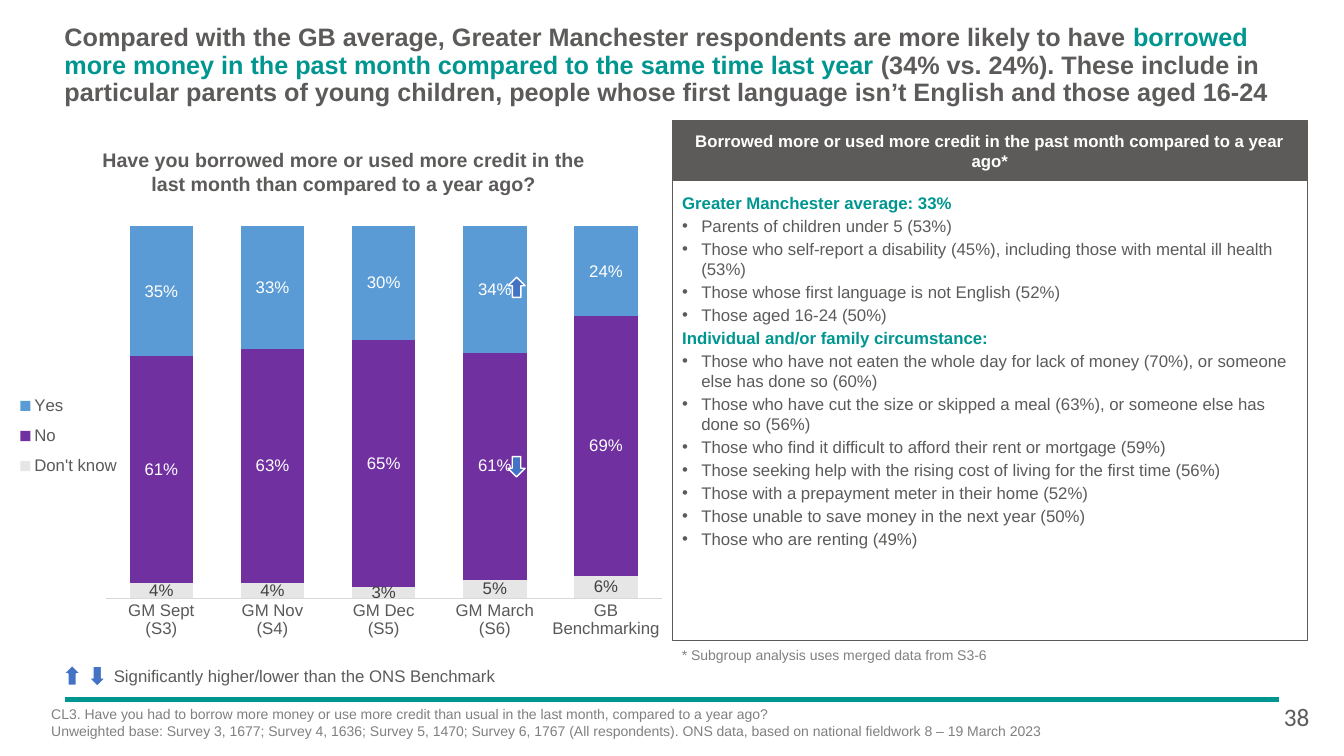
from dataclasses import dataclass

from lxml import etree
from pptx import Presentation
from pptx.chart.data import CategoryChartData
from pptx.dml.color import RGBColor
from pptx.enum.chart import XL_CHART_TYPE, XL_LABEL_POSITION, XL_LEGEND_POSITION, XL_TICK_MARK
from pptx.enum.shapes import MSO_CONNECTOR, MSO_SHAPE
from pptx.enum.text import MSO_ANCHOR, PP_ALIGN
from pptx.oxml.ns import qn
from pptx.util import Pt

LEFT, CENTER = PP_ALIGN.LEFT, PP_ALIGN.CENTER
TOP, MIDDLE = MSO_ANCHOR.TOP, MSO_ANCHOR.MIDDLE
RECTANGLE, DOWN_ARROW = MSO_SHAPE.RECTANGLE, MSO_SHAPE.DOWN_ARROW
STACKED = XL_CHART_TYPE.COLUMN_STACKED_100

GREY, TEAL, WHITE, NOTE_GREY = "5C5B5A", "009690", "FFFFFF", "808080"
ARROW_BLUE, AXIS_TEXT, AXIS_LINE = "4472C4", "595959", "D9D9D9"
DEFAULT_INSETS = (7.2, 3.6, 7.2, 3.6)


@dataclass
class Run:
    text: str
    color: str = GREY
    bold: bool = False


@dataclass
class Answer:
    name: str
    values: tuple[float, ...]
    fill: str
    label_color: str


@dataclass
class Arrow:
    left: float
    top: float
    up: bool


@dataclass
class Group:
    heading: str
    bullets: tuple[str, ...]


TITLE = [
    Run("Compared with the GB average, Greater Manchester respondents are more likely to have ", GREY, True),
    Run("borrowed more money in the past month compared to the same time last year ", TEAL, True),
    Run("(34% vs. 24%). These include in particular parents of young children, people whose first "
        "language isn’t English and those aged 16-24", GREY, True),
]
WAVES = ["GM Sept\n(S3)", "GM Nov\n(S4)", "GM Dec\n(S5)", "GM March\n(S6)", "GB\nBenchmarking"]
ANSWERS = [
    Answer("Don't know", (0.04, 0.04, 0.03, 0.05, 0.06), "E7E6E6", "404040"),
    Answer("No", (0.61, 0.63, 0.65, 0.61, 0.69), "7030A0", WHITE),
    Answer("Yes", (0.35, 0.33, 0.30, 0.34, 0.24), "5B9BD5", WHITE),
]
ARROWS = [
    Arrow(63.4, 475.9, False), Arrow(45.4, 475.2, True),
    Arrow(362.9, 198, True), Arrow(362.9, 326.2, False),
]
GROUPS = [
    Group("Greater Manchester average: 33%", (
        "Parents of children under 5 (53%)",
        "Those who self-report a disability (45%), including those with mental ill health (53%)",
        "Those whose first language is not English (52%)",
        "Those aged 16-24 (50%)",
    )),
    Group("Individual and/or family circumstance:", (
        "Those who have not eaten the whole day for lack of money (70%), or someone else has done so (60%)",
        "Those who have cut the size or skipped a meal (63%), or someone else has done so (56%)",
        "Those who find it difficult to afford their rent or mortgage (59%)",
        "Those seeking help with the rising cost of living for the first time (56%)",
        "Those with a prepayment meter in their home (52%)",
        "Those unable to save money in the next year (50%)",
        "Those who are renting (49%)",
    )),
]
SOURCES = [
    "CL3. Have you had to borrow more money or use more credit than usual in the last month, "
    "compared to a year ago?",
    "Unweighted base: Survey 3, 1677; Survey 4, 1636; Survey 5, 1470; Survey 6, 1767 (All respondents). "
    "ONS data, based on national fieldwork 8 – 19 March 2023",
]


def rgb(color: str) -> RGBColor:
    return RGBColor.from_string(color)


def style_font(font, size: float, color: str, bold: bool = False, name: str = "Arial") -> None:
    font.size, font.bold, font.name = Pt(size), bold, name
    font.color.rgb = rgb(color)


def write_text(shape, paragraphs: list[list[Run]], *, size: float = 12, font: str = "Arial",
               align=LEFT, anchor=TOP, insets=DEFAULT_INSETS, wrap: bool = True,
               line_spacing: float = 1.0, space_after: float = 0) -> None:
    frame = shape.text_frame
    frame.word_wrap, frame.vertical_anchor = wrap, anchor
    frame.margin_left, frame.margin_top, frame.margin_right, frame.margin_bottom = map(Pt, insets)
    for index, runs in enumerate(paragraphs):
        paragraph = frame.add_paragraph() if index else frame.paragraphs[0]
        paragraph.alignment, paragraph.line_spacing = align, line_spacing
        paragraph.space_after = Pt(space_after)
        for item in runs:
            run = paragraph.add_run()
            run.text = item.text
            style_font(run.font, size, item.color, item.bold, font)


def add_text(slide, left: float, top: float, width: float, height: float,
             paragraphs: list[list[Run]], **text_format) -> None:
    box = slide.shapes.add_textbox(Pt(left), Pt(top), Pt(width), Pt(height))
    write_text(box, paragraphs, **text_format)


def add_shape(slide, kind, left: float, top: float, width: float, height: float,
              fill: str | None, line: str, line_width: float):
    shape = slide.shapes.add_shape(kind, Pt(left), Pt(top), Pt(width), Pt(height))
    shape.shadow.inherit = False
    if fill:
        shape.fill.solid()
        shape.fill.fore_color.rgb = rgb(fill)
    else:
        shape.fill.background()
    shape.line.color.rgb, shape.line.width = rgb(line), Pt(line_width)
    return shape


def add_bullet(paragraph, indent: float) -> None:
    properties = paragraph._p.get_or_add_pPr()
    properties.set("marL", str(Pt(indent)))
    properties.set("indent", str(-Pt(indent)))
    etree.SubElement(properties, qn("a:buFont"), typeface="Arial")
    etree.SubElement(properties, qn("a:buChar"), char="•")


def set_layout(parent, index: int, **settings) -> None:
    for previous in parent.findall(qn("c:layout")):
        parent.remove(previous)
    layout = etree.Element(qn("c:layout"))
    manual = etree.SubElement(layout, qn("c:manualLayout"))
    for tag, value in settings.items():
        etree.SubElement(manual, qn(f"c:{tag}"), val=str(value))
    parent.insert(index, layout)


def add_answer_chart(slide) -> None:
    data = CategoryChartData(number_format="0%")
    data.categories = WAVES
    for answer in ANSWERS:
        data.add_series(answer.name, answer.values)
    chart = slide.shapes.add_chart(STACKED, Pt(-0.7), Pt(152.6), Pt(473.8), Pt(349.2), data).chart
    style_font(chart.font, 10, "000000")
    chart.has_title = False

    chart.has_legend = True
    chart.legend.position = XL_LEGEND_POSITION.LEFT
    chart.legend.include_in_layout = False
    style_font(chart.legend.font, 12, AXIS_TEXT)
    set_layout(chart.legend._element, 1, xMode="edge", yMode="edge", x=0.02, y=0.35, w=0.17, h=0.21)
    set_layout(chart._chartSpace.chart.plotArea, 0, layoutTarget="inner", xMode="edge", yMode="edge",
               x=0.161, y=0.026, w=0.838, h=0.761)

    chart.value_axis.visible = False
    chart.value_axis.has_major_gridlines = False
    axis = chart.category_axis
    axis.major_tick_mark = XL_TICK_MARK.NONE
    axis.format.line.color.rgb, axis.format.line.width = rgb(AXIS_LINE), Pt(0.75)
    style_font(axis.tick_labels.font, 12, AXIS_TEXT)

    plot = chart.plots[0]
    plot.gap_width, plot.overlap, plot.vary_by_categories = 75, 100, False
    for series, answer in zip(plot.series, ANSWERS):
        series.format.fill.solid()
        series.format.fill.fore_color.rgb = rgb(answer.fill)
        labels = series.data_labels
        labels.show_value, labels.position = True, XL_LABEL_POSITION.CENTER
        labels.number_format, labels.number_format_is_linked = "0%", False
        style_font(labels.font, 12, answer.label_color)


def add_subgroup_panel(slide) -> None:
    header = add_shape(slide, RECTANGLE, 480.2, 86.4, 453.6, 42.5, GREY, GREY, 0.75)
    heading = "Borrowed more or used more credit in the past month compared to a year ago*"
    write_text(header, [[Run(heading, WHITE, True)]], align=CENTER, anchor=MIDDLE)
    body = add_shape(slide, RECTANGLE, 480.2, 128.9, 453.6, 329, None, GREY, 0.75)
    lines = [run for group in GROUPS
             for run in (Run(group.heading, TEAL, True), *map(Run, group.bullets))]
    write_text(body, [[run] for run in lines], insets=(7.2, 8.6, 7.2, 3.6), space_after=2)
    for paragraph, run in zip(body.text_frame.paragraphs, lines):
        if not run.bold:
            add_bullet(paragraph, 13.7)


def main() -> None:
    presentation = Presentation()
    presentation.slide_width, presentation.slide_height = Pt(960), Pt(540)
    slide = presentation.slides.add_slide(presentation.slide_layouts[6])

    # Footer rule and title
    rule = slide.shapes.add_connector(MSO_CONNECTOR.STRAIGHT, Pt(46.1), Pt(499.7), Pt(913.7), Pt(499.7))
    rule.line.color.rgb, rule.line.width = rgb(TEAL), Pt(3)
    etree.SubElement(rule._element.spPr, qn("a:effectLst"))
    add_text(slide, 46.1, 18, 875.5, 62.6, [TITLE], size=18, insets=(0, 0, 0, 0), line_spacing=0.9)

    # Chart with its question
    question = "Have you borrowed more or used more credit in the last month than compared to a year ago?"
    add_text(slide, 71.3, 105.8, 348.5, 33.8, [[Run(question, GREY, True)]],
             size=14, align=CENTER, insets=(0, 0, 0, 0))
    add_answer_chart(slide)

    # Subgroup findings
    add_subgroup_panel(slide)
    add_text(slide, 480, 458.6, 251.5, 19.4,
             [[Run("* Subgroup analysis uses merged data from S3-6", NOTE_GREY)]], size=10)

    # Significance arrows and key
    for arrow in ARROWS:
        shape = add_shape(slide, DOWN_ARROW, arrow.left, arrow.top, 12.2, 14.4, ARROW_BLUE, WHITE, 1)
        shape.rotation = 180 if arrow.up else 0
    add_text(slide, 74.2, 472.3, 289.4, 21.6,
             [[Run("Significantly higher/lower than the ONS Benchmark")]], wrap=False)

    # Sources and page number
    add_text(slide, 29.5, 500.4, 862.6, 39.6, [[Run(line, NOTE_GREY)] for line in SOURCES], size=10)
    add_text(slide, 910.1, 497.5, 38.2, 28.8, [[Run("38")]], size=18, font="Calibri")

    presentation.save("out.pptx")


if __name__ == "__main__":
    main()
